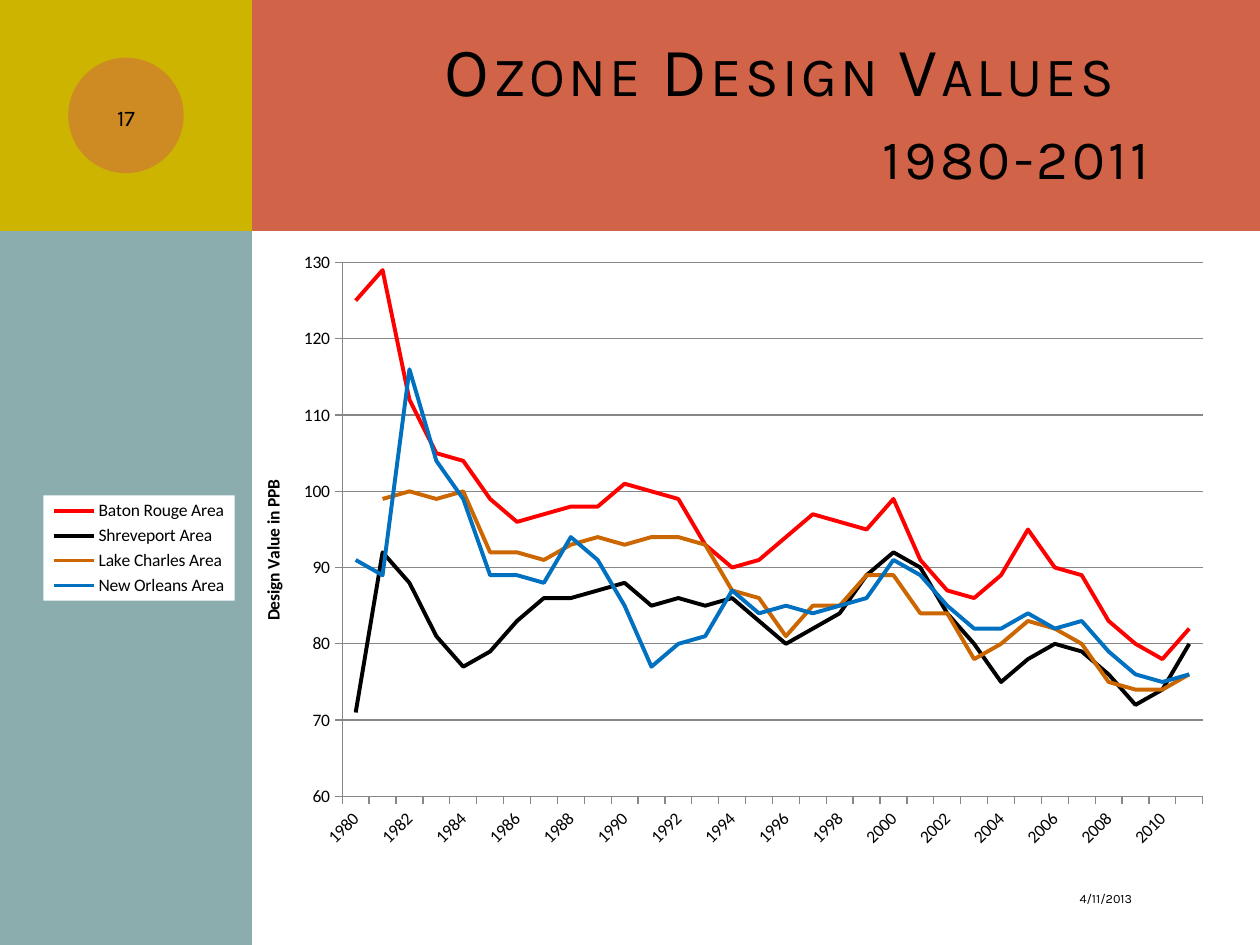
"""Build the slide of ozone design values for four Louisiana areas, 1980-2011."""
from lxml.etree import SubElement
from pptx import Presentation
from pptx.chart.data import CategoryChartData
from pptx.dml.color import RGBColor
from pptx.enum.chart import XL_CHART_TYPE, XL_LEGEND_POSITION, XL_MARKER_STYLE, XL_TICK_MARK
from pptx.enum.shapes import MSO_SHAPE
from pptx.enum.text import MSO_ANCHOR, PP_ALIGN
from pptx.oxml import parse_xml
from pptx.oxml.ns import nsdecls, qn
from pptx.util import Pt

COLORS = {
    "banner": "D16349", "sidebar": "8CADAE", "corner": "CCB400", "text": "000000",
    "grid": "878787", "red": "FF0000", "black": "000000", "orange": "CC6600", "blue": "0070C0",
}
YEARS = [str(year) for year in range(1980, 2012)]
AREAS = [
    ("Baton Rouge Area", "red",
     [125, 129, 112, 105, 104, 99, 96, 97, 98, 98, 101, 100, 99, 93, 90, 91,
      94, 97, 96, 95, 99, 91, 87, 86, 89, 95, 90, 89, 83, 80, 78, 82]),
    ("Shreveport Area", "black",
     [71, 92, 88, 81, 77, 79, 83, 86, 86, 87, 88, 85, 86, 85, 86, 83,
      80, 82, 84, 89, 92, 90, 84, 80, 75, 78, 80, 79, 76, 72, 74, 80]),
    ("Lake Charles Area", "orange",
     [None, 99, 100, 99, 100, 92, 92, 91, 93, 94, 93, 94, 94, 93, 87, 86,
      81, 85, 85, 89, 89, 84, 84, 78, 80, 83, 82, 80, 75, 74, 74, 76]),
    ("New Orleans Area", "blue",
     [91, 89, 116, 104, 99, 89, 89, 88, 94, 91, 85, 77, 80, 81, 87, 84,
      85, 84, 85, 86, 91, 89, 85, 82, 82, 84, 82, 83, 79, 76, 75, 76]),
]


def color(name):
    return RGBColor.from_string(COLORS[name])


def add_block(page, kind, left, top, width, height, fill, alpha=None):
    block = page.shapes.add_shape(kind, Pt(left), Pt(top), Pt(width), Pt(height))
    block.shadow.inherit = False
    block.fill.solid()
    block.fill.fore_color.rgb = color(fill)
    block.line.fill.background()
    if alpha:
        tint = block.fill._xPr.find(".//" + qn("a:srgbClr"))
        SubElement(tint, qn("a:alpha")).set("val", str(alpha * 1000))


def add_text(page, left, top, width, height, lines, size, align, spacing=0):
    box = page.shapes.add_textbox(Pt(left), Pt(top), Pt(width), Pt(height))
    frame = box.text_frame
    frame.word_wrap = True
    frame.vertical_anchor = MSO_ANCHOR.MIDDLE
    para = frame.paragraphs[0]
    para.alignment = align
    for number, line in enumerate(lines):
        if number:
            para.add_line_break()
        span = para.add_run()
        span.text = line
        span.font.name = "Karla"
        span.font.size = Pt(size)
        span.font.color.rgb = color("text")
        properties = span.font._element
        properties.set("cap", "small")
        if spacing:
            properties.set("spc", str(spacing * 100))


def set_layout(element, index, **sizes):
    old = element.find(qn("c:layout"))
    if old is not None:
        element.remove(old)
    layout = parse_xml(f"<c:layout {nsdecls('c')}><c:manualLayout/></c:layout>")
    manual = layout[0]
    if element.tag == qn("c:plotArea"):
        SubElement(manual, qn("c:layoutTarget")).set("val", "inner")
    for side in ("x", "y"):
        SubElement(manual, qn(f"c:{side}Mode")).set("val", "edge")
    for side, share in sizes.items():
        SubElement(manual, qn(f"c:{side}")).set("val", str(share))
    element.insert(index, layout)


def style_axes(chart):
    years, values = chart.category_axis, chart.value_axis
    for axis in (years, values):
        axis.major_tick_mark = XL_TICK_MARK.OUTSIDE
        axis.minor_tick_mark = XL_TICK_MARK.NONE
        axis.format.line.color.rgb = color("grid")
        axis.format.line.width = Pt(0.75)
        axis.tick_labels.font.size = Pt(10)
    years._element.find(qn("c:txPr")).find(qn("a:bodyPr")).set("rot", "-2700000")
    last = years._element.find(qn("c:noMultiLvlLbl"))
    for tag, step in (("c:tickLblSkip", "2"), ("c:tickMarkSkip", "1")):
        skip = parse_xml(f'<{tag} {nsdecls("c")} val="{step}"/>')
        last.addprevious(skip)

    values.minimum_scale, values.maximum_scale, values.major_unit = 60, 130, 10
    values.has_major_gridlines = True
    values.major_gridlines.format.line.color.rgb = color("grid")
    values.major_gridlines.format.line.width = Pt(0.75)
    frame = values.axis_title.text_frame
    span = frame.paragraphs[0].add_run()
    span.text = "Design Value in PPB"
    span.font.name = "Calibri"
    span.font.size = Pt(10)
    span.font.bold = True
    span.font.color.rgb = color("text")
    frame._txBody.bodyPr.set("rot", "-5400000")
    frame._txBody.bodyPr.set("vert", "horz")
    set_layout(values.axis_title._element, 1, x=0.19, y=0.38)


def style_legend(chart):
    chart.has_legend = True
    legend = chart.legend
    legend.position = XL_LEGEND_POSITION.LEFT
    legend.include_in_layout = False
    set_layout(legend._element, 1, x=0.01, y=0.41, w=0.16, h=0.17)
    legend._element.find(qn("c:overlay")).addnext(parse_xml(
        f'<c:spPr {nsdecls("c", "a")}><a:solidFill><a:srgbClr val="FFFFFF"/>'
        "</a:solidFill></c:spPr>"))


def add_ozone_chart(page):
    data = CategoryChartData()
    data.categories = YEARS
    for name, _, values in AREAS:
        data.add_series(name, values)
    chart = page.shapes.add_chart(
        XL_CHART_TYPE.LINE, Pt(18), Pt(138), Pt(683), Pt(354), data).chart
    chart.has_title = False
    chart.font.name = "Calibri"
    chart.font.size = Pt(10)
    chart.font.color.rgb = color("text")
    plot = chart.plots[0]
    plot.vary_by_categories = False
    for series, (_, tone, _) in zip(plot.series, AREAS):
        series.smooth = False
        series.marker.style = XL_MARKER_STYLE.NONE
        series.format.line.color.rgb = color(tone)
        series.format.line.width = Pt(2.25)
    style_axes(chart)
    style_legend(chart)
    plot_area = chart._chartSpace.find(".//" + qn("c:plotArea"))
    set_layout(plot_area, 0, x=0.26, y=0.034, w=0.72, h=0.862)


def main():
    deck = Presentation()
    deck.slide_width, deck.slide_height = Pt(720), Pt(540)
    page = deck.slides.add_slide(deck.slide_layouts[6])
    add_block(page, MSO_SHAPE.RECTANGLE, 36, 0, 684, 132, "banner")
    add_block(page, MSO_SHAPE.RECTANGLE, 0, 0, 144, 540, "sidebar")
    add_block(page, MSO_SHAPE.RECTANGLE, 0, 0, 144, 132, "corner")
    add_block(page, MSO_SHAPE.OVAL, 39, 33, 66, 66, "banner", alpha=50)
    add_text(page, 150, 18, 534, 90, ["Ozone Design Values", " 1980-2011"], 39.6,
             PP_ALIGN.RIGHT, spacing=2)
    add_ozone_chart(page)
    add_text(page, 486, 498, 168, 29, ["4/11/2013"], 9, PP_ALIGN.RIGHT)
    add_text(page, 42, 42, 60, 48, ["17"], 16, PP_ALIGN.CENTER)
    deck.save("out.pptx")


if __name__ == "__main__":
    main()
